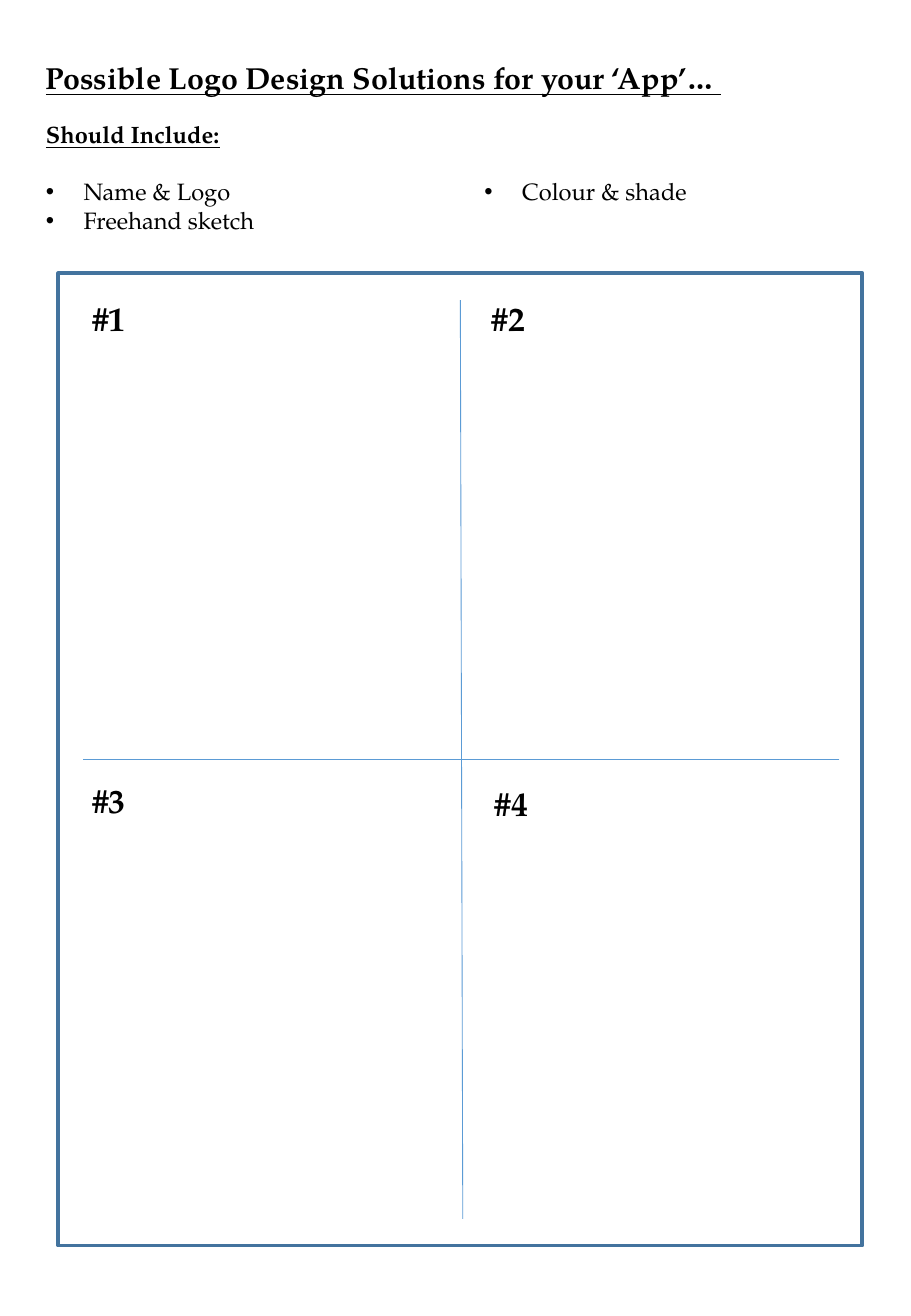
from lxml import etree
from pptx import Presentation
from pptx.dml.color import RGBColor
from pptx.enum.shapes import MSO_CONNECTOR, MSO_SHAPE
from pptx.oxml.ns import qn
from pptx.util import Pt

PX = 9144  # 100 px to the inch
FONT = "TeX Gyre Pagella"
BLACK = RGBColor(0x00, 0x00, 0x00)
FRAME_BLUE = RGBColor(0x43, 0x73, 0x9E)
LINE_BLUE = RGBColor(0x5B, 0x9B, 0xD5)
RECTANGLE = MSO_SHAPE.RECTANGLE
STRAIGHT = MSO_CONNECTOR.STRAIGHT

BULLET_INDENT = 31
BLANK_LINE = Pt(17)


def px(*lengths):
    return [length * PX for length in lengths]


def style(paragraph, size, bold=False, underline=False):
    font = paragraph.font
    font.name, font.size = FONT, Pt(size)
    font.bold, font.underline = bold, underline
    font.color.rgb = BLACK


def add_text(slide, box, text, size, **look):
    """Add a text box with one line per paragraph and return its paragraphs."""
    frame = slide.shapes.add_textbox(*px(*box)).text_frame
    frame.word_wrap = True
    frame.text = text
    for paragraph in frame.paragraphs:
        style(paragraph, size, **look)
    return frame.paragraphs


def add_bullet(paragraph):
    properties = paragraph._p.get_or_add_pPr()
    properties.set("marL", str(BULLET_INDENT * PX))
    properties.set("indent", str(-BULLET_INDENT * PX))
    etree.SubElement(properties, qn("a:buFont")).set("typeface", "Arial")
    etree.SubElement(properties, qn("a:buChar")).set("char", "•")


def add_header(slide, box):
    left, top, width, height = box
    add_text(slide, (left, top, width, 40),
             "Possible Logo Design Solutions for your ‘App’… ", 18,
             bold=True, underline=True)


def add_requirements(slide, box):
    """Place the heading and its bullets in two columns."""
    left, top, width, height = box
    column = width // 2
    heading, *bullets = add_text(
        slide, (left, top, column, height),
        "Should Include:\nName & Logo\nFreehand sketch", 14)
    style(heading, 14, bold=True, underline=True)
    heading.space_after = BLANK_LINE
    bullets += add_text(slide, (left + column, top + 47, column, 33),
                        "Colour & shade", 14)
    for bullet in bullets:
        add_bullet(bullet)


def add_divider(slide, start, end):
    line = slide.shapes.add_connector(STRAIGHT, *px(*start, *end))
    line.line.color.rgb = LINE_BLUE
    line.line.width = Pt(0.5)
    etree.SubElement(line._element.spPr, qn("a:effectLst"))


def add_sketch_grid(slide, box):
    left, top, width, height = box
    frame = slide.shapes.add_shape(RECTANGLE, *px(*box))
    frame.shadow.inherit = False
    frame.fill.background()
    frame.line.color.rgb = FRAME_BLUE
    frame.line.width = Pt(2.25)

    center, middle = left + width // 2 + 1, top + height // 2
    add_divider(slide, (center - 1, top + 22), (center + 1, top + height - 22))
    add_divider(slide, (left + width - 19, middle), (left + 20, middle))

    label_offsets = [(18, 15), (347, 15), (18, 412), (349, 414)]
    for number, (x, y) in enumerate(label_offsets, start=1):
        add_text(slide, (left + x, top + y, 88, 44), f"#{number}", 20, bold=True)


def main():
    presentation = Presentation()
    presentation.slide_width, presentation.slide_height = px(750, 1083)
    slide = presentation.slides.add_slide(presentation.slide_layouts[6])
    add_header(slide, (28, 44, 639, 40))
    add_requirements(slide, (28, 94, 722, 120))
    add_sketch_grid(slide, (48, 225, 662, 800))
    presentation.save("out.pptx")


if __name__ == "__main__":
    main()
